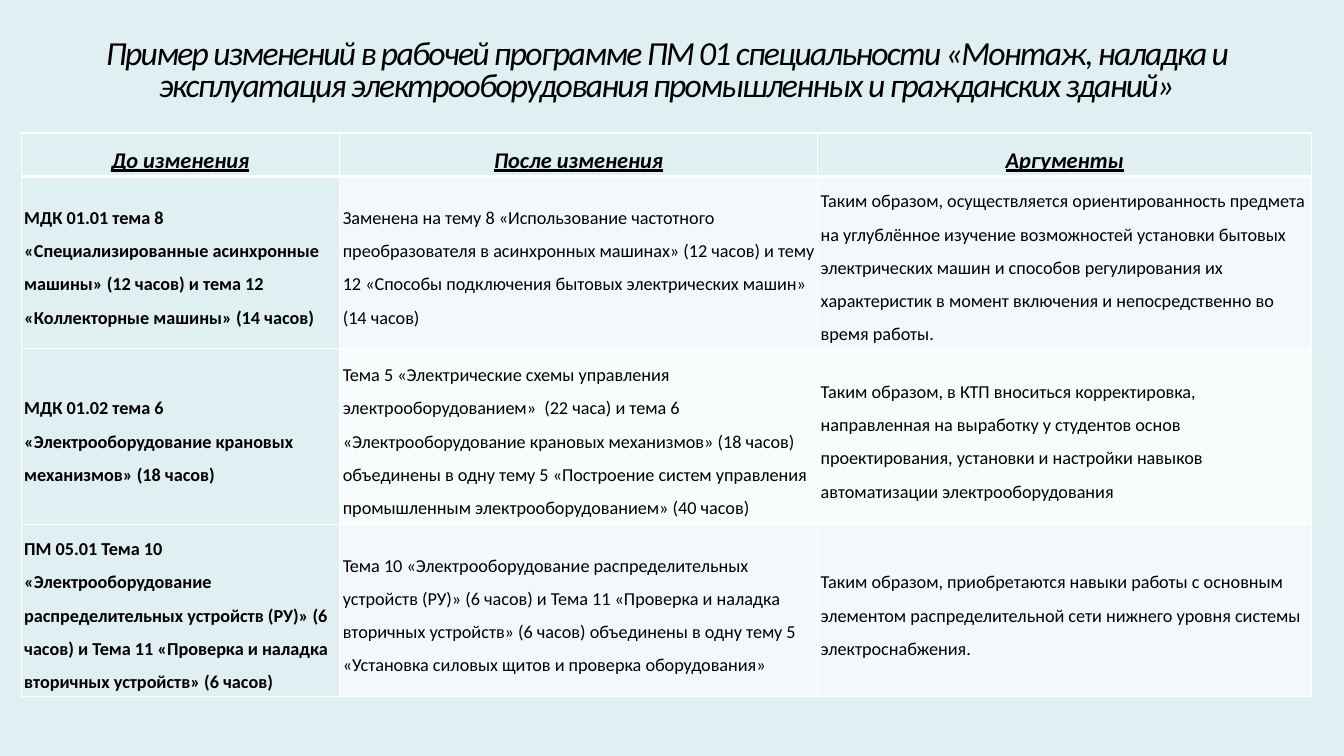
from dataclasses import dataclass

from lxml import etree
from pptx import Presentation
from pptx.dml.color import RGBColor
from pptx.enum.text import MSO_ANCHOR, MSO_AUTO_SIZE, PP_ALIGN
from pptx.oxml.ns import qn
from pptx.util import Inches, Pt

CENTER, LEFT = PP_ALIGN.CENTER, PP_ALIGN.LEFT
TOP, MIDDLE, BOTTOM = MSO_ANCHOR.TOP, MSO_ANCHOR.MIDDLE, MSO_ANCHOR.BOTTOM
NO_AUTOFIT = MSO_AUTO_SIZE.NONE
TITLE_ONLY = 5


@dataclass(frozen=True)
class Theme:
    font: str = "Calibri"
    ink: str = "000000"
    page: str = "E0EFF1"
    band: str = "F3F9FA"
    band_light: str = "F9FCFC"
    border: str = "FFFFFF"
    title_size: int = 24
    header_size: int = 16
    body_size: int = 13
    border_width: int = 1
    header_rule: int = 3


@dataclass(frozen=True)
class CellStyle:
    font: dict
    fill: str
    align: PP_ALIGN = LEFT
    anchor: MSO_ANCHOR = MIDDLE


@dataclass(frozen=True)
class Change:
    before: str
    after: str
    reason: str
    fill: str


THEME = Theme()
TITLE = ("Пример изменений в рабочей программе ПМ 01 специальности «Монтаж, наладка и "
         "эксплуатация электрооборудования промышленных и гражданских зданий»")
HEADERS = ("До изменения", "После изменения", "Аргументы")
CHANGES = (
    Change(
        "МДК 01.01 тема 8 «Специализированные асинхронные машины» (12 часов) "
        "и тема 12 «Коллекторные машины» (14 часов)",
        "Заменена на тему 8 «Использование частотного преобразователя в асинхронных "
        "машинах» (12 часов) и тему 12 «Способы подключения бытовых электрических "
        "машин» (14 часов)",
        "Таким образом, осуществляется ориентированность предмета на углублённое "
        "изучение возможностей установки бытовых электрических машин и способов "
        "регулирования их характеристик в момент включения и непосредственно во "
        "время работы.",
        THEME.band),
    Change(
        "МДК 01.02 тема 6 «Электрооборудование крановых механизмов» (18 часов)",
        "Тема 5 «Электрические схемы управления электрооборудованием»  (22 часа) и "
        "тема 6 «Электрооборудование крановых механизмов» (18 часов) объединены в "
        "одну тему 5 «Построение систем управления промышленным "
        "электрооборудованием» (40 часов)",
        "Таким образом, в КТП вноситься корректировка, направленная на выработку у "
        "студентов основ проектирования, установки и настройки навыков "
        "автоматизации электрооборудования",
        THEME.band_light),
    Change(
        "ПМ 05.01 Тема 10 «Электрооборудование распределительных устройств (РУ)» "
        "(6 часов) и Тема 11 «Проверка и наладка вторичных устройств» (6 часов)",
        "Тема 10 «Электрооборудование распределительных устройств (РУ)» (6 часов) и "
        "Тема 11 «Проверка и наладка вторичных устройств» (6 часов) объединены в "
        "одну тему 5 «Установка силовых щитов и проверка оборудования»",
        "Таким образом, приобретаются навыки работы с основным элементом "
        "распределительной сети нижнего уровня системы электроснабжения.",
        THEME.band),
)
COLUMN_WIDTHS = (3.16, 4.74, 4.9)
ROW_HEIGHTS = (0.43, 1.71, 1.74, 1.71)

HEADER_FONT = {"size": Pt(THEME.header_size), "bold": True, "italic": True, "underline": True}
TOPIC_FONT = {"size": Pt(THEME.body_size), "bold": True}
BODY_FONT = {"size": Pt(THEME.body_size), "bold": False}


def set_attributes(target, values: dict) -> None:
    for name, value in values.items():
        setattr(target, name, value)


def write_text(tf, text: str, font: dict, align: PP_ALIGN, spacing: float):
    p = tf.paragraphs[0]
    set_attributes(p, {"alignment": align, "line_spacing": spacing})
    r = p.add_run()
    r.text = text
    set_attributes(r.font, {"name": THEME.font, **font})
    r.font.color.rgb = RGBColor.from_string(THEME.ink)
    return r


def set_borders(cell, widths: dict) -> None:
    tc_pr = cell._tc.get_or_add_tcPr()
    for index, (side, width) in enumerate(widths.items()):
        line = etree.Element(qn(f"a:ln{side}"), w=str(Pt(width)))
        fill = etree.SubElement(line, qn("a:solidFill"))
        etree.SubElement(fill, qn("a:srgbClr"), val=THEME.border)
        tc_pr.insert(index, line)


def fill_cell(cell, text: str, style: CellStyle, top: int, bottom: int) -> None:
    side_margin = Inches(0.03)
    set_attributes(cell, {"margin_left": side_margin, "margin_right": side_margin,
                          "margin_top": 0, "margin_bottom": 0,
                          "vertical_anchor": style.anchor})
    write_text(cell.text_frame, text, style.font, style.align, 1.5)
    cell.fill.solid()
    cell.fill.fore_color.rgb = RGBColor.from_string(style.fill)
    thin = THEME.border_width
    set_borders(cell, {"L": thin, "R": thin, "T": top, "B": bottom})


def add_title(s) -> None:
    sp = s.shapes.title
    set_attributes(sp, {"left": Inches(0.41), "top": Inches(0.19),
                        "width": Inches(12.4), "height": Inches(0.89)})
    tf = sp.text_frame
    set_attributes(tf, {"word_wrap": True, "auto_size": NO_AUTOFIT,
                        "vertical_anchor": BOTTOM})
    font = {"size": Pt(THEME.title_size), "italic": True}
    r = write_text(tf, TITLE, font, CENTER, 0.8)
    r.font._element.set("spc", "-120")  # letter spacing, hundredths of a point


def add_changes_table(s) -> None:
    header = CellStyle(HEADER_FONT, THEME.page, CENTER, TOP)
    topic = CellStyle(TOPIC_FONT, THEME.page)
    rows = [[(text, header) for text in HEADERS]]
    for change in CHANGES:
        body = CellStyle(BODY_FONT, change.fill)
        rows.append([(change.before, topic), (change.after, body), (change.reason, body)])

    table = s.shapes.add_table(len(rows), len(HEADERS), Inches(0.21), Inches(1.32),
                               Inches(sum(COLUMN_WIDTHS)), Inches(sum(ROW_HEIGHTS))).table
    for column, width in zip(table.columns, COLUMN_WIDTHS):
        column.width = Inches(width)
    for row, height in zip(table.rows, ROW_HEIGHTS):
        row.height = Inches(height)
    for i, row in enumerate(rows):
        top = THEME.header_rule if i == 1 else THEME.border_width
        bottom = THEME.header_rule if i == 0 else THEME.border_width
        for j, (text, style) in enumerate(row):
            fill_cell(table.cell(i, j), text, style, top, bottom)


def main() -> None:
    # Slide and background
    prs = Presentation()
    set_attributes(prs, {"slide_width": Inches(13.33), "slide_height": Inches(7.5)})
    s = prs.slides.add_slide(prs.slide_layouts[TITLE_ONLY])
    s.background.fill.solid()
    s.background.fill.fore_color.rgb = RGBColor.from_string(THEME.page)

    # Content
    add_title(s)
    add_changes_table(s)
    prs.save("out.pptx")


if __name__ == "__main__":
    main()
